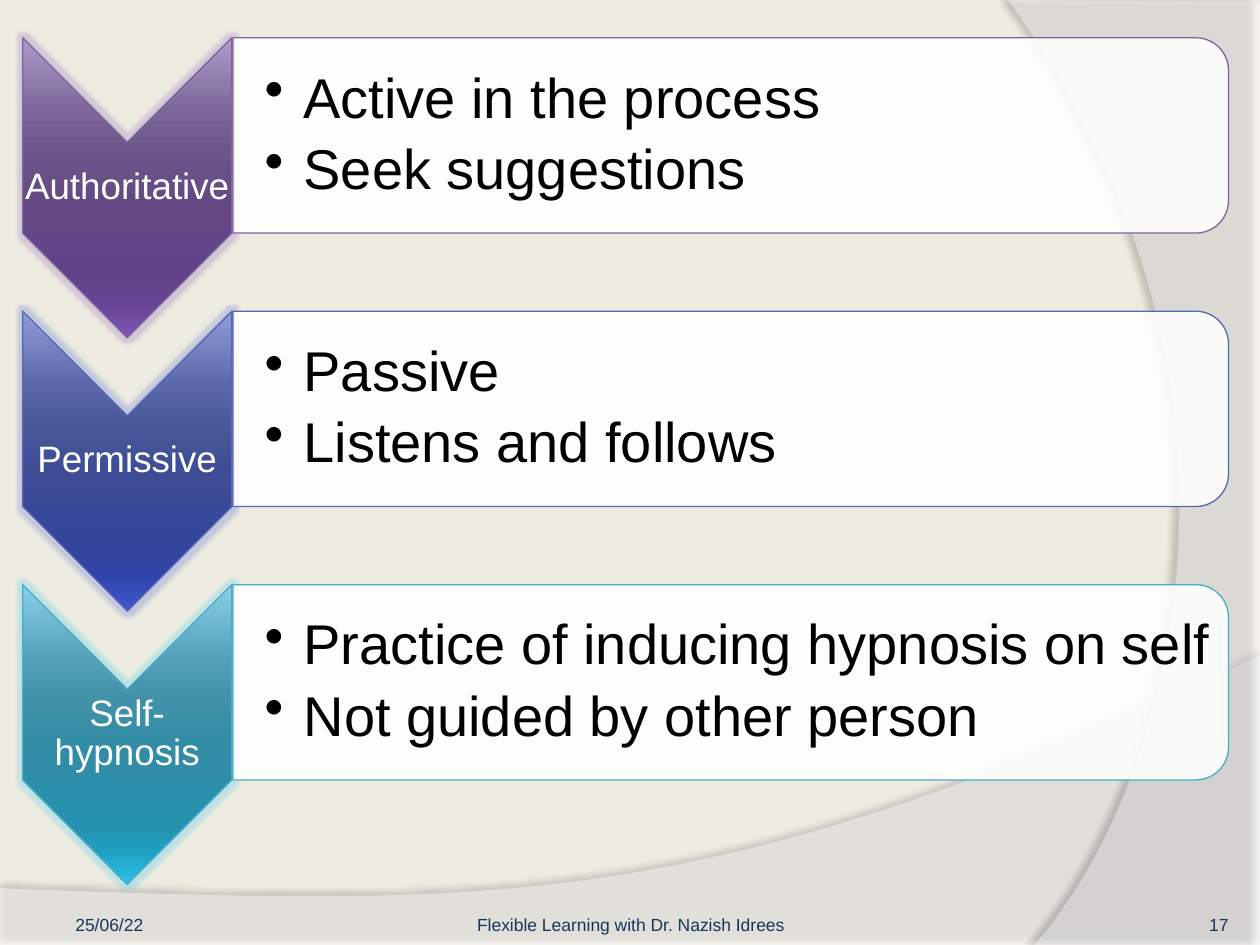
from pptx import Presentation
from pptx.dml.color import RGBColor
from pptx.enum.shapes import MSO_SHAPE
from pptx.enum.text import MSO_ANCHOR, PP_ALIGN
from pptx.oxml import parse_xml
from pptx.oxml.ns import nsdecls, qn
from pptx.util import Inches, Pt

CHEVRON = MSO_SHAPE.CHEVRON
PANEL = MSO_SHAPE.ROUND_2_SAME_RECTANGLE
LEFT, CENTER, RIGHT = PP_ALIGN.LEFT, PP_ALIGN.CENTER, PP_ALIGN.RIGHT
MIDDLE, BOTTOM = MSO_ANCHOR.MIDDLE, MSO_ANCHOR.BOTTOM

COLORS = {"back": "EEECE1", "white": "FFFFFF", "black": "000000", "foot": "17365C",
          "purple": "8064A2", "blue": "5767B4", "teal": "4BACC6"}
STOPS = (0, 25, 38, 55, 80, 88, 100)
SHADES = {
    "purple": ("AD9BC9", "7C6599", "6C5589", "644984", "624389", "674394", "7F55B3"),
    "blue": ("929BD8", "5B67A9", "4A5799", "3D4C95", "33459C", "3045AA", "4057CE"),
    "teal": ("8BCEE7", "52A1B9", "4191A8", "318CA5", "2592AF", "1F9EC0", "2CC0E8"),
}
ROWS = [
    ("Authoritative", "purple", ["Active in the process", "Seek suggestions"]),
    ("Permissive", "blue", ["Passive", "Listens and follows"]),
    ("Self-hypnosis", "teal",
     ["Practice of inducing hypnosis on self", "Not guided by other person"]),
]
TOP, PITCH = 0.3, 2.17


def rgb(name):
    return RGBColor.from_string(COLORS[name])


def xml(tag, attrs="", inner=""):
    return parse_xml(f"<a:{tag} {nsdecls('a')} {attrs}>{inner}</a:{tag}>")


def tint(code, alpha):
    return f'<a:srgbClr val="{code}"><a:alpha val="{alpha * 1000}"/></a:srgbClr>'


def fill_white(shape, alpha):
    shape.fill.solid()
    shape.fill.fore_color.rgb = rgb("white")
    color = shape._element.spPr.find(qn("a:solidFill"))[0]
    color.append(xml("alpha", f'val="{alpha * 1000}"'))


def add_effect(shape, node):
    shape._element.spPr.find(qn("a:effectLst")).append(node)


def curve(p0, p1, p2, p3, steps=60):
    """Points along a cubic curve, without its start."""
    for i in range(1, steps + 1):
        t = i / steps
        u = 1 - t
        yield tuple(u**3 * a + 3 * u * u * t * b + 3 * u * t * t * c + t**3 * d
                    for a, b, c, d in zip(p0, p1, p2, p3))


def add_wave(slide, points, alpha, shade, dist, angle):
    spots = [(Inches(x), Inches(y)) for x, y in points]
    pen = slide.shapes.build_freeform(*spots[0])
    pen.add_line_segments(spots[1:], close=True)
    wave = pen.convert_to_shape()
    wave.shadow.inherit = False
    fill_white(wave, alpha)
    wave.line.fill.background()
    add_effect(wave, xml(
        "outerShdw", f'blurRad="{Pt(4)}" dist="{Pt(dist)}" dir="{angle * 60000}" '
        'algn="ctr" rotWithShape="0"', tint(COLORS["black"], shade)))


def add_turned(slide, kind, x, y, w, h, color):
    """Preset turned a quarter clockwise; x, y, w, h is the area it shows in."""
    left, top = x + (w - h) / 2, y + (h - w) / 2
    shape = slide.shapes.add_shape(
        kind, Inches(left), Inches(top), Inches(h), Inches(w))
    shape.rotation = 90
    shape.shadow.inherit = False
    shape.line.color.rgb = rgb(color)
    shape.line.width = Pt(0.75)
    return shape


def add_text(slide, lines, x, y, w, h, size=10, color="foot", align=LEFT,
             anchor=MIDDLE, pads=(0, 0, 0, 0), gap=0, ratio=1.0, bullet=False):
    frame = slide.shapes.add_textbox(
        Inches(x), Inches(y), Inches(w), Inches(h)).text_frame
    frame.word_wrap = True
    frame.vertical_anchor = anchor
    (frame.margin_left, frame.margin_top,
     frame.margin_right, frame.margin_bottom) = map(Inches, pads)
    for i, line in enumerate(lines):
        para = frame.add_paragraph() if i else frame.paragraphs[0]
        para.text = line
        if bullet:
            para.level = 1
            props = para._p.get_or_add_pPr()
            props.set("marL", str(Inches(0.31)))
            props.set("indent", str(Inches(-0.31)))
            props.append(xml("buChar", 'char="•"'))
        para.alignment = align
        para.line_spacing = ratio
        para.space_after = Pt(gap)
        font = para.runs[0].font
        font.name, font.size = "Arial", Pt(size)
        font.color.rgb = rgb(color)


def add_row(slide, y, label, color, points):
    # Arrow with its gradient and glow
    arrow = add_turned(slide, CHEVRON, 0.18, y, 1.66, 2.38, color)
    stops = "".join(f'<a:gs pos="{pos * 1000}"><a:srgbClr val="{code}"/></a:gs>'
                    for pos, code in zip(STOPS, SHADES[color]))
    arrow.fill.background()
    props = arrow._element.spPr
    props.replace(props.find(qn("a:noFill")), xml(
        "gradFill", 'rotWithShape="0"',
        f'<a:gsLst>{stops}</a:gsLst><a:lin ang="5400000" scaled="0"/>'))
    add_effect(arrow, xml("glow", f'rad="{Pt(5)}"', tint(SHADES[color][-1], 25)))
    add_text(slide, [label], 0.18, y + 0.83, 1.66, 0.71, size=21, color="white",
             align=CENTER, pads=(0.01,) * 4, gap=8, ratio=0.9)

    # Panel with its points
    panel = add_turned(slide, PANEL, 1.85, y, 7.9, 1.55, color)
    fill_white(panel, 90)
    add_text(slide, points, 1.85, y + 0.08, 7.83, 1.39, size=32, color="black",
             pads=(0.25, 0.02, 0.02, 0.02), gap=6, ratio=0.9, bullet=True)


def main():
    deck = Presentation()
    deck.slide_width, deck.slide_height = Inches(10), Inches(7.5)
    slide = deck.slides.add_slide(deck.slide_layouts[6])
    slide.background.fill.solid()
    slide.background.fill.fore_color.rgb = rgb("back")

    # Background waves
    low = curve((10, 5.2), (5.59, 7.29), (3.91, 7.19), (0, 7.05))
    add_wave(slide, [(0, 7.05), (0, 7.51), (10, 7.51), (10, 5.2), *low],
             45, 35, 3.5, 270)
    side = curve((8.21, 7.5), (9.35, 6.19), (10.18, 3), (8, 0))
    add_wave(slide, [(10, 0.02), (10, 7.5), (8.21, 7.5), *side], 40, 45, 4, 180)

    # Footer
    add_text(slide, ["25/06/22"], 0.5, 7.02, 2.33, 0.4, anchor=BOTTOM,
             pads=(0.1, 0.05, 0.1, 0))
    add_text(slide, ["Flexible Learning with Dr. Nazish Idrees"], 3.42, 7.02, 3.17,
             0.4, align=CENTER, anchor=BOTTOM, pads=(0, 0.05, 0, 0))
    add_text(slide, ["17"], 8.92, 7.02, 0.83, 0.4, align=RIGHT, anchor=BOTTOM)

    # Rows
    for i, row in enumerate(ROWS):
        add_row(slide, TOP + i * PITCH, *row)

    deck.save("out.pptx")


if __name__ == "__main__":
    main()
